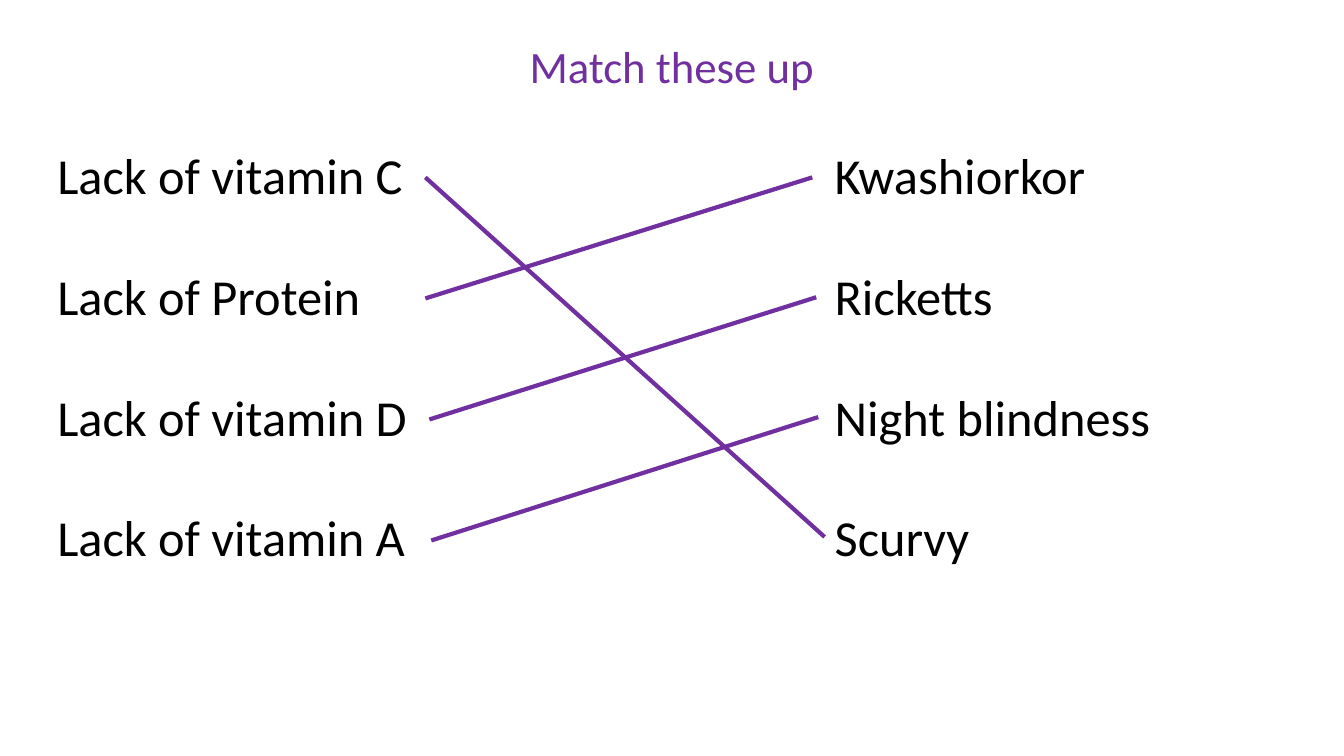
from pptx import Presentation
from pptx import util as u
from pptx.dml.color import RGBColor
from pptx.enum import shapes, text
from pptx.oxml.ns import qn
from lxml import etree

COLOURS = {"accent": "7030A0", "body": "000000", "background": "FFFFFF"}
FONT = "Calibri"

CAUSES = ["Lack of vitamin C", "Lack of Protein", "Lack of vitamin D", "Lack of vitamin A"]
DISEASES = ["Kwashiorkor", "Ricketts", "Night blindness", "Scurvy"]
MATCHES = {
    "Lack of vitamin C": "Scurvy",
    "Lack of Protein": "Kwashiorkor",
    "Lack of vitamin D": "Ricketts",
    "Lack of vitamin A": "Night blindness",
}

# Boxes are left, top, width, height in centimetres.
TITLE_BOX = (0.61, 0.86, 32.64, 1.63)
CAUSE_BOX = (1.19, 3.51, 11.91, 11.02)
DISEASE_BOX = (20.78, 3.51, 11.91, 11.02)

# Line ends, row by row, measured from the left edge of their column.
CAUSE_ENDS = [9.53, 9.53, 9.63, 9.68]
DISEASE_ENDS = [-0.31, -0.21, -0.16, 0]
FIRST_ROW = 0.96
CAUSE_PITCH = 3.05
DISEASE_PITCH = 3.02


def colour(name):
    return RGBColor.from_string(COLOURS[name])


def write_text(shape, lines, box, size, color, align=text.PP_ALIGN.LEFT, gap=0):
    """Place a placeholder and fill it with unbulleted paragraphs."""
    shape.left, shape.top, shape.width, shape.height = map(u.Cm, box)
    frame = shape.text_frame
    frame.word_wrap = True
    frame.auto_size = text.MSO_AUTO_SIZE.NONE
    frame.vertical_anchor = text.MSO_ANCHOR.TOP
    frame.text = "\n".join(lines)
    for row, paragraph in enumerate(frame.paragraphs):
        properties = paragraph._p.get_or_add_pPr()
        properties.set("marL", "0")
        properties.set("indent", "0")
        etree.SubElement(properties, qn("a:buNone"))
        paragraph.alignment = align
        paragraph.space_before = u.Pt(gap if row else 0)
        paragraph.font.name = FONT
        paragraph.font.size = u.Pt(size)
        paragraph.font.color.rgb = colour(color)


def row_end(box, ends, pitch, row):
    left, top = box[:2]
    return u.Cm(left + ends[row]), u.Cm(top + FIRST_ROW + pitch * row)


def draw_matches(slide, cause_box, disease_box):
    for row, cause in enumerate(CAUSES):
        start = row_end(cause_box, CAUSE_ENDS, CAUSE_PITCH, row)
        disease_row = DISEASES.index(MATCHES[cause])
        end = row_end(disease_box, DISEASE_ENDS, DISEASE_PITCH, disease_row)
        line = slide.shapes.add_connector(shapes.MSO_CONNECTOR.STRAIGHT, *start, *end)
        line.line.color.rgb = colour("accent")
        line.line.width = u.Pt(3)
        etree.SubElement(line._element.spPr, qn("a:effectLst"))


def build_matching_slide(presentation):
    slide = presentation.slides.add_slide(presentation.slide_layouts.get_by_name("Two Content"))
    slide.background.fill.solid()
    slide.background.fill.fore_color.rgb = colour("background")
    causes, diseases = slide.placeholders[1], slide.placeholders[2]
    write_text(slide.shapes.title, ["Match these up"], TITLE_BOX, size=32,
               color="accent", align=text.PP_ALIGN.CENTER)
    write_text(causes, CAUSES, CAUSE_BOX, size=36, color="body", gap=43)
    write_text(diseases, DISEASES, DISEASE_BOX, size=36, color="body", gap=43)
    draw_matches(slide, CAUSE_BOX, DISEASE_BOX)


def main():
    presentation = Presentation()
    presentation.slide_width = u.Cm(33.87)
    presentation.slide_height = u.Cm(19.05)
    build_matching_slide(presentation)
    presentation.save("out.pptx")


if __name__ == "__main__":
    main()
